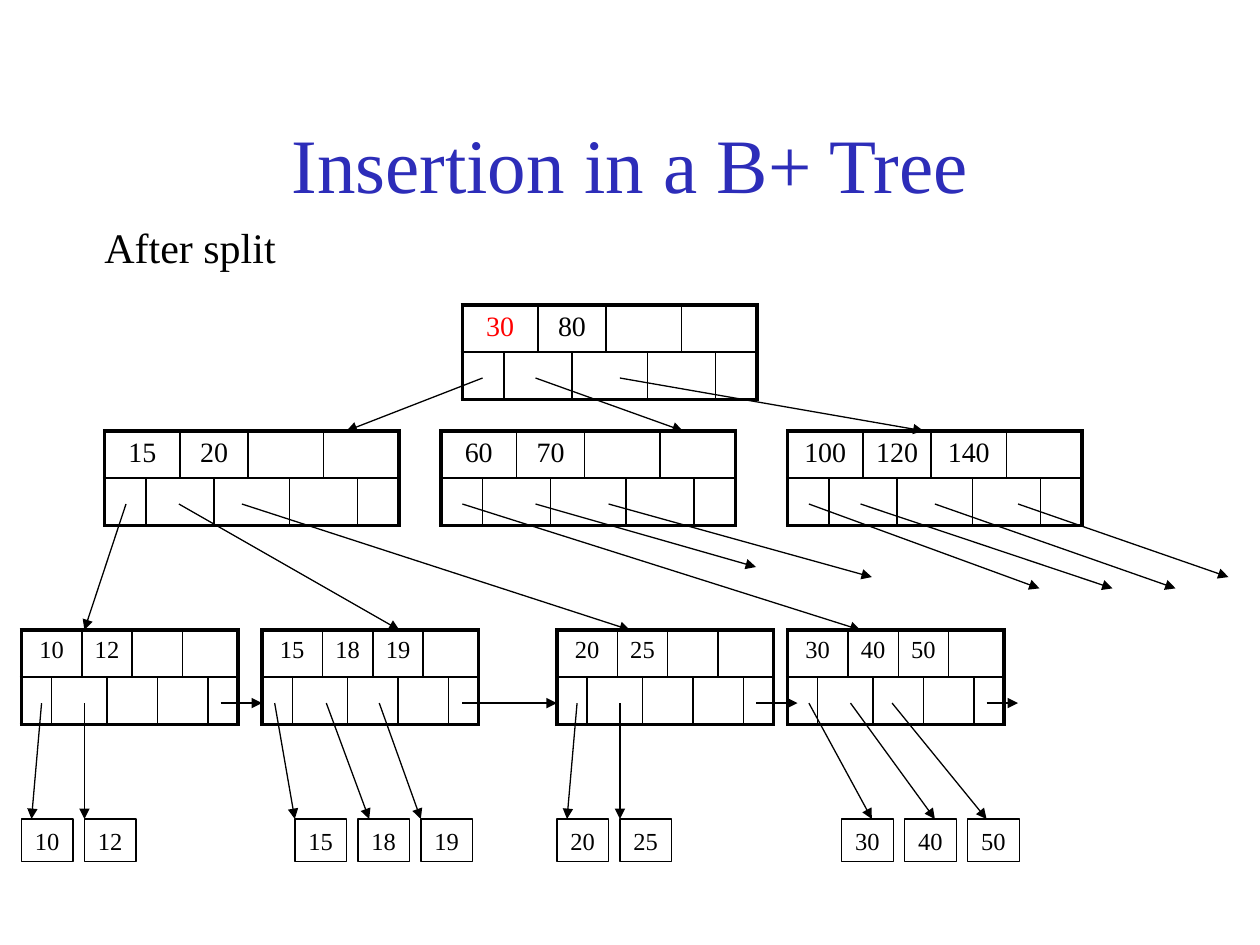
"""Build the slide that shows a B+ tree after a node split."""
import pptx
import pptx.dml.color
import pptx.enum.shapes
import pptx.enum.text
import pptx.oxml.ns
import pptx.util
from lxml import etree

Inches = pptx.util.Inches
Pt = pptx.util.Pt
Align = pptx.enum.text.PP_ALIGN
Anchor = pptx.enum.text.MSO_ANCHOR
Fit = pptx.enum.text.MSO_AUTO_SIZE
qn = pptx.oxml.ns.qn

BLUE = pptx.dml.color.RGBColor(0x2D, 0x2D, 0xB9)
BLACK = pptx.dml.color.RGBColor(0, 0, 0)
RED = pptx.dml.color.RGBColor(0xFF, 0, 0)
FONT = "Times New Roman"
PLAIN = "{2D5ABB26-0587-4C30-8999-92F81FD0307C}"
THICK, THIN = Pt(2.25), Pt(1)

WIDE = [0.33, 0.27, 0.27, 0.27, 0.33, 0.27, 0.27, 0.33]
SLIM = [0.24] + [0.2] * 6 + [0.23]
TOP = [(0, 2), (2, 2), (4, 2), (6, 2)]
LOW = [(0, 1), (1, 2), (3, 2), (5, 2), (7, 1)]

NODES = [
    (3.67, 2.42, WIDE, 16, ["30", "80"]),
    (0.83, 3.42, WIDE, 16, ["15", "20"]),
    (3.5, 3.42, WIDE, 16, ["60", "70"]),
    (6.25, 3.42, WIDE, 16, ["100", "120", "140"]),
    (0.17, 5, SLIM, 14, ["10", "12"]),
    (2.08, 5, SLIM, 14, ["15", "18", "19"]),
    (4.42, 5, SLIM, 14, ["20", "25"]),
    (6.25, 5, SLIM, 14, ["30", "40", "50"]),
]
ITEMS = [
    (0.17, ["10", "12"]),
    (2.34, ["15", "18", "19"]),
    (4.42, ["20", "25"]),
    (6.68, ["30", "40", "50"]),
]
LINKS = [
    (3, [(3.83, 2.75, 3.42), (4.25, 5.42, 3.42), (4.92, 7.33, 3.42)]),
    (4, [(1, 0.67, 5), (1.42, 3.17, 5), (1.92, 5, 5)]),
    (4, [(3.67, 6.83, 5), (4.25, 6, 4.5), (4.83, 6.92, 4.58)]),
    (4, [(6.42, 8.25, 4.67), (6.83, 8.83, 4.67),
         (7.42, 9.33, 4.67), (8.08, 9.75, 4.58)]),
    (5.58, [(1.75, 2.08, 5.58), (3.67, 4.42, 5.58),
            (6, 6.33, 5.58), (7.83, 8.08, 5.58)]),
    (5.58, [(0.33, 0.25, 6.5), (0.67, 0.67, 6.5)]),
    (5.58, [(2.18, 2.34, 6.5), (2.59, 2.93, 6.5), (3.01, 3.34, 6.5)]),
    (5.58, [(4.58, 4.5, 6.5), (4.92, 4.92, 6.5)]),
    (5.58, [(6.42, 6.92, 6.5), (6.75, 7.42, 6.5), (7.08, 7.83, 6.5)]),
]


def write(frame, text, size, color=BLACK, align=Align.CENTER):
    para = frame.paragraphs[0]
    para.alignment = align
    run = para.add_run()
    run.text = text
    run.font.size = Pt(size)
    run.font.name = FONT
    run.font.color.rgb = color


def edge(cell, side, width):
    props = cell._tc.get_or_add_tcPr()
    line = etree.SubElement(props, qn("a:ln" + side), w=str(width))
    fill = etree.SubElement(line, qn("a:solidFill"))
    etree.SubElement(fill, qn("a:srgbClr"), val=str(BLACK))


deck = pptx.Presentation()
deck.slide_width, deck.slide_height = Inches(10), Inches(7.5)
slide = deck.slides.add_slide(deck.slide_layouts[5])
shapes = slide.shapes

title = shapes.title
title.left, title.top = Inches(0.75), Inches(0.67)
title.width, title.height = Inches(8.5), Inches(1.25)
title.text_frame.vertical_anchor = Anchor.MIDDLE
write(title.text_frame, "Insertion in a B+ Tree", 44, BLUE)

note = shapes.add_textbox(Inches(0.73), Inches(1.71), Inches(1.56), Inches(0.5))
note.text_frame.word_wrap = False
note.text_frame.auto_size = Fit.SHAPE_TO_FIT_TEXT
write(note.text_frame, "After split", 24, align=Align.LEFT)

for left, top, widths, size, keys in NODES:
    frame = shapes.add_table(2, 8, Inches(left), Inches(top),
                             Inches(sum(widths)), Inches(0.75))
    table = frame.table
    table.first_row = table.horz_banding = False
    table._tbl.tblPr.find(qn("a:tableStyleId")).text = PLAIN
    for col, width in zip(table.columns, widths):
        col.width = Inches(width)
    for cell in table.iter_cells():
        cell.margin_top = cell.margin_bottom = 0
    for row, spans in enumerate([TOP, LOW]):
        for start, span in spans:
            cell = table.cell(row, start)
            if span > 1:
                cell.merge(table.cell(row, start + span - 1))
            edge(cell, "L", THICK if start == 0 else THIN)
            edge(cell, "R", THICK if start + span == 8 else THIN)
            edge(cell, "T", THICK if row == 0 else THIN)
            edge(cell, "B", THICK if row == 1 else THIN)
            cell.fill.background()
    for slot, key in enumerate(keys):
        cell = table.cell(0, slot * 2)
        cell.margin_top = Inches(0.05)
        fresh = key == "30" and widths is WIDE
        write(cell.text_frame, key, size, RED if fresh else BLACK)

for left, keys in ITEMS:
    for slot, key in enumerate(keys):
        box = shapes.add_shape(pptx.enum.shapes.MSO_SHAPE.RECTANGLE,
                               Inches(left + slot * 0.5), Inches(6.5),
                               Inches(0.41), Inches(0.34))
        box.shadow.inherit = False
        box.fill.background()
        box.line.color.rgb = BLACK
        box.line.width = Pt(0.75)
        box.text_frame.word_wrap = False
        box.text_frame.auto_size = Fit.SHAPE_TO_FIT_TEXT
        box.text_frame.vertical_anchor = Anchor.MIDDLE
        write(box.text_frame, key, 14)

for top, ends in LINKS:
    for start, stop, base in ends:
        link = shapes.add_connector(pptx.enum.shapes.MSO_CONNECTOR.STRAIGHT,
                                    Inches(start), Inches(top),
                                    Inches(stop), Inches(base))
        link.line.color.rgb = BLACK
        link.line.width = Pt(0.75)
        etree.SubElement(link.line._get_or_add_ln(), qn("a:tailEnd"), type="triangle")
        etree.SubElement(link._element.spPr, qn("a:effectLst"))

deck.save("out.pptx")
